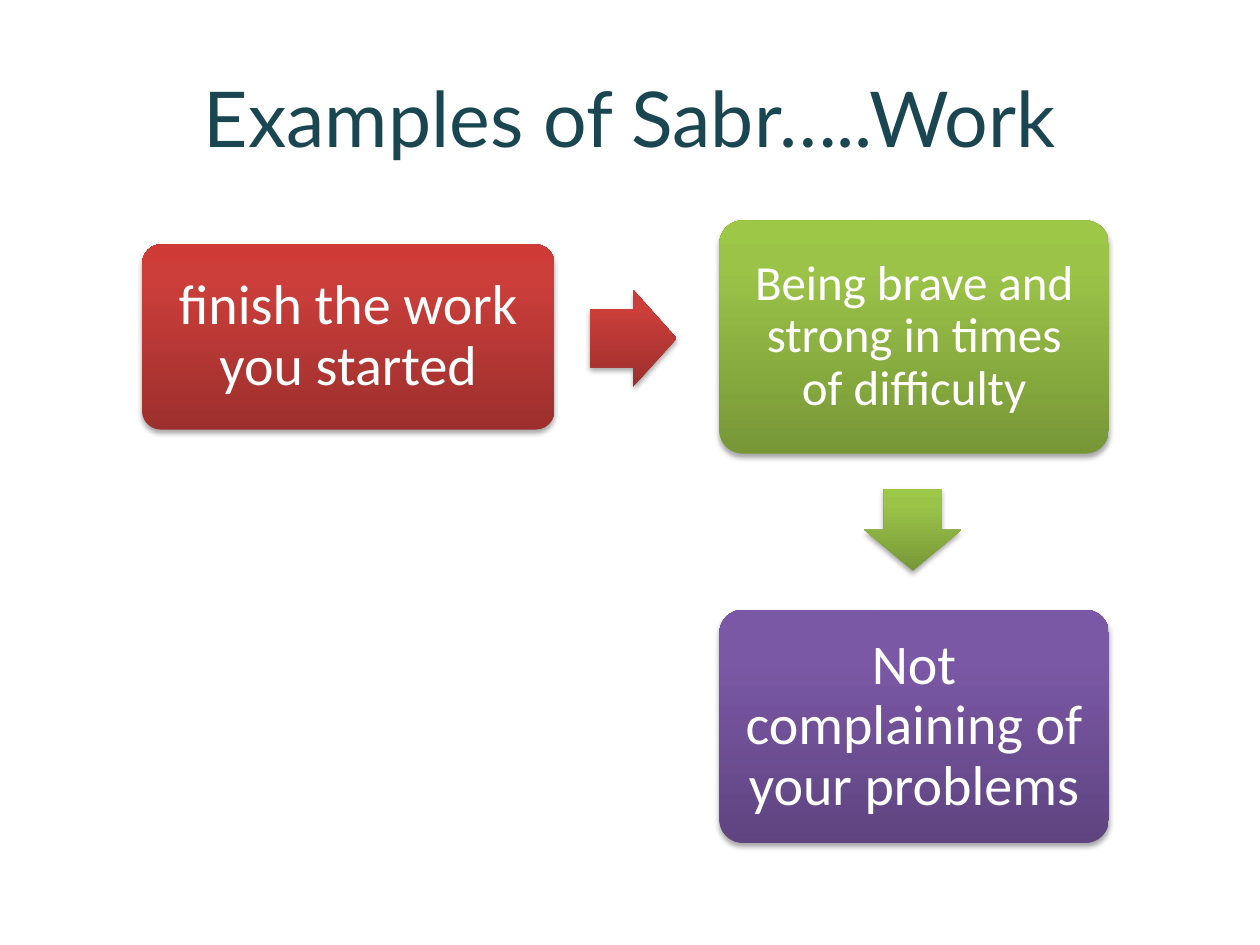
from dataclasses import dataclass

from pptx import Presentation
from pptx import oxml
from pptx import util as u
from pptx.dml import color
from pptx.enum import shapes, text
from pptx.oxml import ns


@dataclass(frozen=True)
class Theme:
    title_font: str = "Lato"
    body_font: str = "Calibri"
    title_color: str = "1A4652"
    text_color: str = "FFFFFF"
    title_size: int = 44
    large_size: int = 32
    medium_size: int = 28
    # Gradients run from the dark bottom edge to the bright top edge
    red: tuple = ("9C2F2D", "CB3E3A", "CE3B37")
    green: tuple = ("779737", "9BC348", "9DC746")
    purple: tuple = ("5F4480", "7B58A6", "7C57A8")


THEME = Theme()
GRADIENT_STOPS = (0, 80, 100)


def write_text(box, words, font_name, size, rgb, inset=0.1, line_spacing=1.0):
    frame = box.text_frame
    frame.word_wrap = True
    frame.vertical_anchor = text.MSO_ANCHOR.MIDDLE
    frame.margin_left = frame.margin_right = u.Inches(inset)
    frame.margin_top = frame.margin_bottom = u.Inches(inset)
    para = frame.paragraphs[0]
    para.text = words
    para.alignment = text.PP_ALIGN.CENTER
    para.line_spacing = line_spacing
    para.font.name = font_name
    para.font.size = u.Pt(size)
    para.font.color.rgb = color.RGBColor.from_string(rgb)


def style_shape(shape, colors):
    """Give a shape an upright gradient, no outline and a soft shadow."""
    shape.line.fill.background()
    stops = "".join(
        f'<a:gs pos="{position * 1000}"><a:srgbClr val="{rgb}"/></a:gs>'
        for position, rgb in zip(GRADIENT_STOPS, colors)
    )
    gradient = oxml.parse_xml(
        f'<a:gradFill {ns.nsdecls("a")} rotWithShape="0"><a:gsLst>{stops}</a:gsLst>'
        '<a:lin ang="16200000" scaled="0"/></a:gradFill>'
    )
    shadow = oxml.parse_xml(
        f'<a:effectLst {ns.nsdecls("a")}>'
        '<a:outerShdw blurRad="40000" dist="23000" dir="5400000" rotWithShape="0">'
        '<a:srgbClr val="000000"><a:alpha val="35000"/></a:srgbClr>'
        "</a:outerShdw></a:effectLst>"
    )
    properties = shape._element.spPr
    properties.find(ns.qn("a:prstGeom")).addnext(gradient)
    properties.find(ns.qn("a:ln")).addnext(shadow)


def add_shape(page, kind, area, colors, adjustments):
    shape = page.shapes.add_shape(kind, *map(u.Inches, area))
    for index, value in enumerate(adjustments):
        shape.adjustments[index] = value
    style_shape(shape, colors)
    return shape


def add_title(page, words):
    box = page.shapes.add_textbox(*map(u.Inches, (0.5, 0.3, 9, 1.25)))
    write_text(box, words, THEME.title_font, THEME.title_size, THEME.title_color)


def add_step(page, words, area, colors, size, inset):
    box = add_shape(
        page, shapes.MSO_SHAPE.ROUNDED_RECTANGLE, area, colors, (0.1,)
    )
    write_text(box, words, THEME.body_font, size, THEME.text_color, inset, 0.9)


def add_arrow(page, area, colors, rotation=0):
    arrow = add_shape(
        page, shapes.MSO_SHAPE.RIGHT_ARROW, area, colors, (0.6, 0.5)
    )
    arrow.rotation = rotation


def main():
    deck = Presentation()
    deck.slide_width, deck.slide_height = u.Inches(10), u.Inches(7.5)
    page = deck.slides.add_slide(deck.slide_layouts[6])

    add_title(page, "Examples of Sabr…..Work")

    # First step, leading right
    add_step(page, "finish the work you started", (1.13, 1.94, 3.27, 1.47),
             THEME.red, THEME.large_size, 0.13)
    add_arrow(page, (4.68, 2.3, 0.69, 0.77), THEME.red)

    # Second step, leading down
    add_step(page, "Being brave and strong in times of difficulty",
             (5.71, 1.75, 3.09, 1.85), THEME.green, THEME.medium_size, 0.12)
    add_arrow(page, (6.92, 3.82, 0.65, 0.77), THEME.green, rotation=90)

    # Last step
    add_step(page, "Not complaining of your problems",
             (5.71, 4.84, 3.09, 1.85), THEME.purple, THEME.large_size, 0.13)

    deck.save("out.pptx")


if __name__ == "__main__":
    main()
